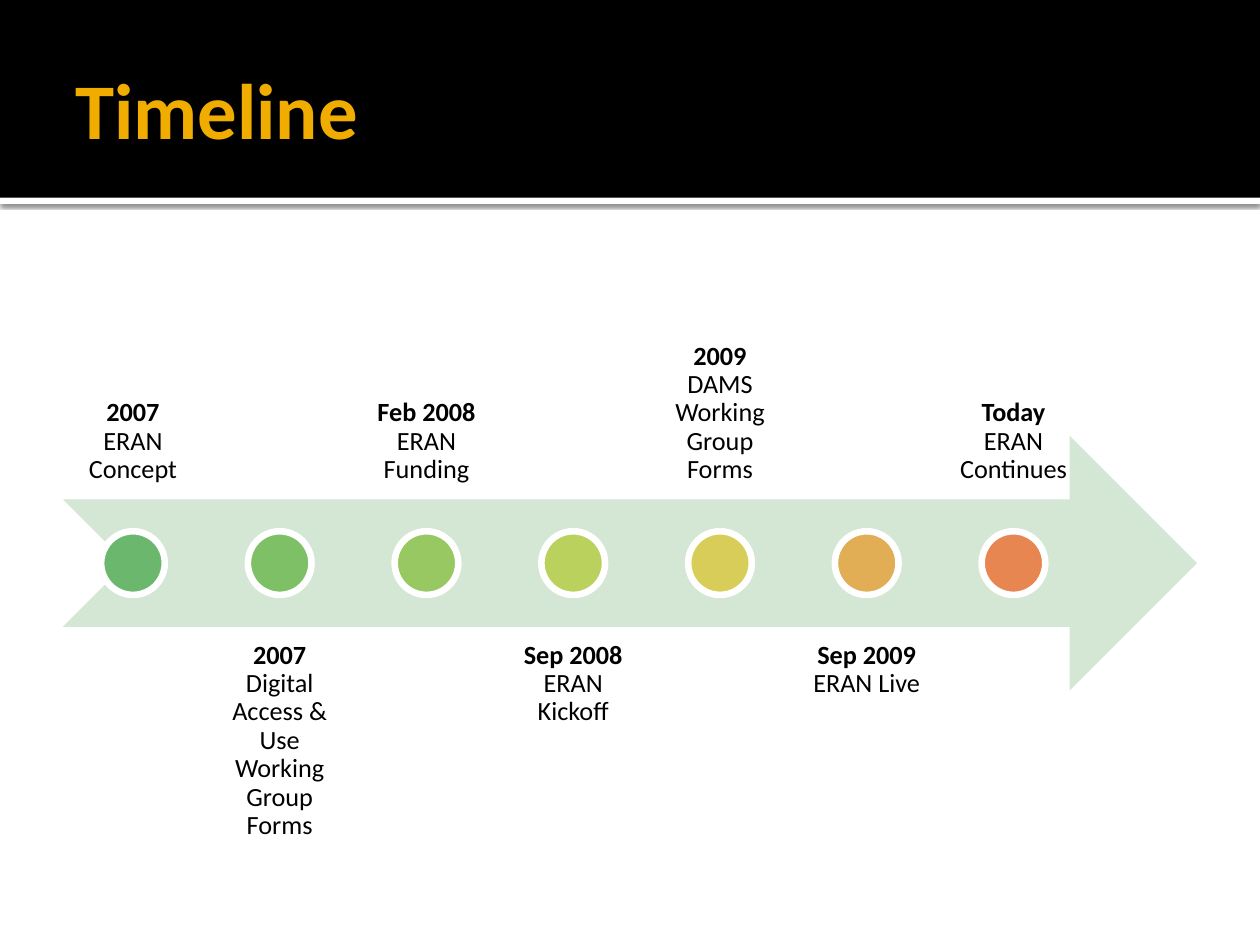
from lxml.etree import SubElement
from pptx import Presentation
from pptx.dml.color import RGBColor
from pptx.enum.shapes import MSO_SHAPE
from pptx.enum.text import MSO_ANCHOR, PP_ALIGN
from pptx.oxml.ns import qn
from pptx.util import Pt

HUES = {
    "black": "000000", "white": "FFFFFF", "gold": "F0AD00", "arrow": "D4E6D4",
    "green": "6BB76D", "leaf": "7DC066", "lime": "98C861", "pear": "BBD15D",
    "yellow": "D9CD59", "amber": "E1AD55", "orange": "E88651",
}

EVENTS = [
    ("2007 ", "ERAN Concept", "green"),
    ("2007", " Digital Access & Use Working Group Forms", "leaf"),
    ("Feb 2008 ", "ERAN Funding", "lime"),
    ("Sep 2008", " ERAN Kickoff", "pear"),
    ("2009 ", "DAMS Working Group Forms", "yellow"),
    ("Sep 2009 ", "ERAN Live", "amber"),
    ("Today ", "ERAN Continues", "orange"),
]


class Deck:
    """Holds the style and the current slide, and draws each kind of element."""

    def __init__(self, wide, high):
        self.font = "Calibri"
        self.prs = Presentation()
        self.prs.slide_width, self.prs.slide_height = Pt(wide), Pt(high)
        self.slide = self.prs.slides.add_slide(self.prs.slide_layouts[6])

    def hue(self, name):
        return RGBColor.from_string(HUES[name])

    def shape(self, kind, box, fill, line=None):
        item = self.slide.shapes.add_shape(kind, *map(Pt, box))
        item.shadow.inherit = False
        item.fill.solid()
        item.fill.fore_color.rgb = self.hue(fill)
        if line:
            item.line.color.rgb = self.hue(line)
            item.line.width = Pt(3.78)
        else:
            item.line.fill.background()
        return item

    def shade(self, item):
        glow = SubElement(
            item.element.spPr.find(qn("a:effectLst")), qn("a:outerShdw"),
            blurRad=str(Pt(2.5)), dist=str(Pt(0.8)), dir="5400000",
            algn="tl", rotWithShape="0")
        tone = SubElement(glow, qn("a:srgbClr"), val=HUES["black"])
        SubElement(tone, qn("a:alpha"), val="60000")

    def text(self, box, runs, size, hue, pads, anchor, align, space=1):
        frame = self.slide.shapes.add_textbox(*map(Pt, box)).text_frame
        frame.word_wrap = True
        frame.vertical_anchor = anchor
        (frame.margin_left, frame.margin_top,
         frame.margin_right, frame.margin_bottom) = map(Pt, pads)
        para = frame.paragraphs[0]
        para.alignment = align
        para.line_spacing = space
        for words, bold in runs:
            run = para.add_run()
            run.text = words
            run.font.name = self.font
            run.font.size = Pt(size)
            run.font.bold = bold
            run.font.color.rgb = self.hue(hue)

    def event(self, mid, above, date, note, fill):
        wide, high, dot = 80, 145.6, 36.4
        top, anchor = (139.6, MSO_ANCHOR.BOTTOM) if above else (358.2, MSO_ANCHOR.TOP)
        self.text((mid - wide / 2, top, wide, high), [(date, True), (note, False)],
                  15, "black", [8.4] * 4, anchor, PP_ALIGN.CENTER, 0.9)
        self.shape(MSO_SHAPE.OVAL, (mid - dot / 2, 321.8 - dot / 2, dot, dot),
                   fill, "white")


def main():
    deck = Deck(720, 540)
    rule = deck.shape(MSO_SHAPE.RECTANGLE, (0, 113, 720, 3.6), "white")
    deck.shade(rule)
    deck.shape(MSO_SHAPE.RECTANGLE, (0, 0, 720, 113), "black")
    deck.text((36, 12.24, 648, 98.64), [("Timeline", True)], 45, "gold",
              (7.2, 3.6, 3.6, 3.6), MSO_ANCHOR.MIDDLE, PP_ALIGN.LEFT)
    deck.shape(MSO_SHAPE.NOTCHED_RIGHT_ARROW, (36, 249, 648, 145.6), "arrow")
    for spot, event in enumerate(EVENTS):
        deck.event(76 + 83.86 * spot, spot % 2 == 0, *event)
    deck.prs.save("out.pptx")


if __name__ == "__main__":
    main()
